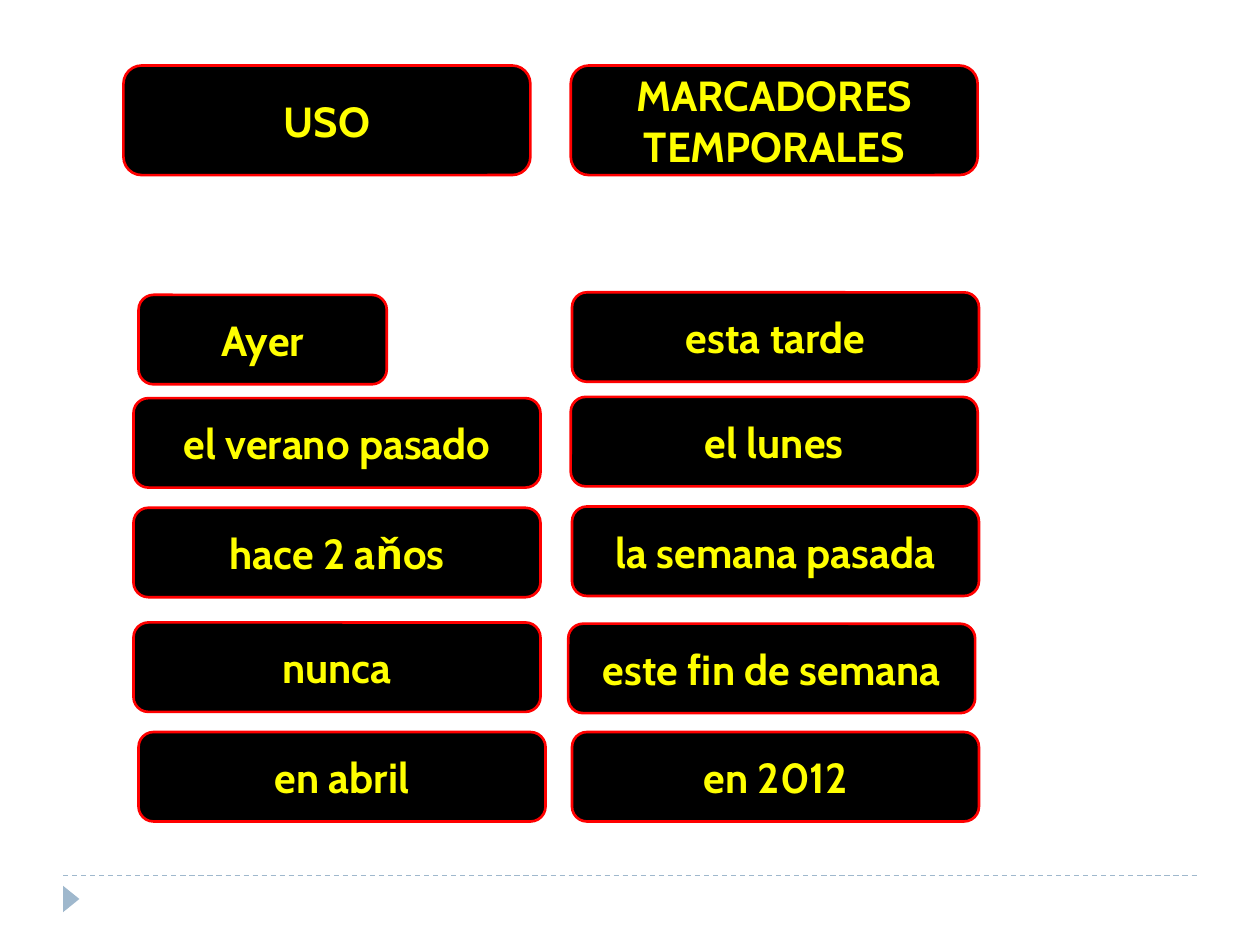
from dataclasses import dataclass

from lxml import etree
from pptx import Presentation
from pptx.dml.color import RGBColor
from pptx.enum.dml import MSO_LINE
from pptx.enum.shapes import MSO_CONNECTOR, MSO_SHAPE
from pptx.enum.text import MSO_ANCHOR, PP_ALIGN
from pptx.oxml.ns import qn
from pptx.slide import Slide
from pptx.util import Inches, Pt

ROUNDED = MSO_SHAPE.ROUNDED_RECTANGLE
TRIANGLE = MSO_SHAPE.ISOSCELES_TRIANGLE
STRAIGHT = MSO_CONNECTOR.STRAIGHT
DASH = MSO_LINE.DASH
MIDDLE = MSO_ANCHOR.MIDDLE
CENTER = PP_ALIGN.CENTER

COLORS = {"card": "000000", "border": "FF0000", "text": "FFFF00", "footer": "9FB8CD"}
FONT = "Cabin"
CARD_WIDTH = 3.23
CARD_HEIGHT = 0.71
HEADER_HEIGHT = 0.87


@dataclass(frozen=True)
class Card:
    text: str
    left: float
    top: float
    width: float = CARD_WIDTH
    height: float = CARD_HEIGHT


CARDS = [
    Card("USO", 0.98, 0.52, height=HEADER_HEIGHT),
    Card("MARCADORES TEMPORALES", 4.53, 0.52, height=HEADER_HEIGHT),
    Card("Ayer", 1.1, 2.34, width=1.97),
    Card("esta tarde", 4.54, 2.32),
    Card("el verano pasado", 1.06, 3.16),
    Card("el lunes", 4.53, 3.15),
    Card("hace 2 aňos", 1.06, 4.03),
    Card("la semana pasada", 4.54, 4.02),
    Card("nunca", 1.06, 4.94),
    Card("este fin de semana", 4.51, 4.95),
    Card("en abril", 1.1, 5.81),
    Card("en 2012", 4.54, 5.81),
]


def color(name: str) -> RGBColor:
    return RGBColor.from_string(COLORS[name])


def draw_footer(page: Slide) -> None:
    rule = page.shapes.add_connector(
        STRAIGHT, Inches(0.5), Inches(6.95), Inches(9.5), Inches(6.95)
    )
    rule.line.color.rgb = color("footer")
    rule.line.width = Pt(0.75)
    rule.line.dash_style = DASH
    etree.SubElement(rule._element.spPr, qn("a:effectLst"))

    marker = page.shapes.add_shape(
        TRIANGLE, Inches(0.46), Inches(7.07), Inches(0.21), Inches(0.13)
    )
    marker.rotation = 90
    marker.shadow.inherit = False
    marker.fill.solid()
    marker.fill.fore_color.rgb = color("footer")
    marker.line.fill.background()


def draw_card(page: Slide, card: Card) -> None:
    box = page.shapes.add_shape(
        ROUNDED,
        Inches(card.left),
        Inches(card.top),
        Inches(card.width),
        Inches(card.height),
    )
    box.shadow.inherit = False
    box.fill.solid()
    box.fill.fore_color.rgb = color("card")
    box.line.color.rgb = color("border")
    box.line.width = Pt(1.5)

    frame = box.text_frame
    frame.word_wrap = True
    frame.vertical_anchor = MIDDLE
    para = frame.paragraphs[0]
    para.text = card.text
    para.alignment = CENTER
    para.font.name = FONT
    para.font.size = Pt(24)
    para.font.bold = True
    para.font.color.rgb = color("text")


def main() -> None:
    deck = Presentation()
    deck.slide_width = Inches(10)
    deck.slide_height = Inches(7.5)
    page = deck.slides.add_slide(deck.slide_layouts[6])
    draw_footer(page)
    for card in CARDS:
        draw_card(page, card)
    deck.save("out.pptx")


if __name__ == "__main__":
    main()
